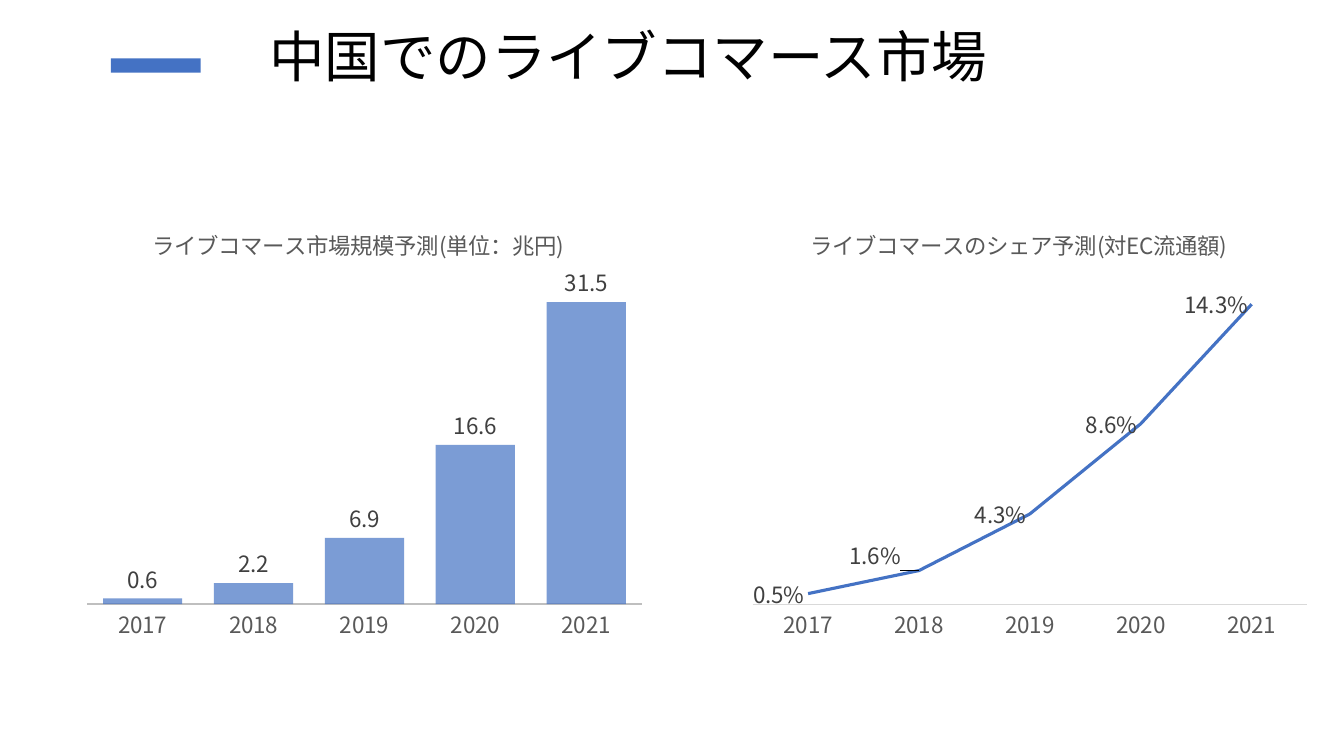
"""Build the slide on the live commerce market in China."""
import pptx
import pptx.chart.data
import pptx.dml.color
import pptx.enum.chart
import pptx.enum.shapes
import pptx.enum.text
import pptx.oxml
import pptx.oxml.ns
import pptx.util

Inches = pptx.util.Inches
Pt = pptx.util.Pt
RGBColor = pptx.dml.color.RGBColor
ChartType = pptx.enum.chart.XL_CHART_TYPE
LabelPosition = pptx.enum.chart.XL_LABEL_POSITION
qn = pptx.oxml.ns.qn

BLUE = RGBColor(0x44, 0x72, 0xC4)
BLACK = RGBColor(0, 0, 0)
TEXT_GREY = RGBColor(0x59, 0x59, 0x59)
LABEL_GREY = RGBColor(0x40, 0x40, 0x40)
BAR_AXIS_GREY = RGBColor(0xBF, 0xBF, 0xBF)
LINE_AXIS_GREY = RGBColor(0xD9, 0xD9, 0xD9)
FONT = "Noto Sans CJK SC"
YEARS = ["2017", "2018", "2019", "2020", "2021"]


def format_font(font, size, color):
    """Set the typeface, size and colour of a font."""
    font.name = FONT
    font.size = Pt(size)
    font.bold = False
    font.color.rgb = color


def use_east_asian_font(element):
    """Use each Latin typeface for East Asian text as well."""
    for latin in list(element.iter(qn("a:latin"))):
        latin.addnext(latin.makeelement(qn("a:ea"), {"typeface": latin.get("typeface")}))


def set_layout(parent, index, settings):
    """Give a chart part a manual layout, inserted at the child index."""
    for layout in parent.findall(qn("c:layout")):
        parent.remove(layout)
    values = "".join(f'<c:{name} val="{value}"/>' for name, value in settings.items())
    parent.insert(index, pptx.oxml.parse_xml(
        f'<c:layout {pptx.oxml.ns.nsdecls("c")}>'
        f"<c:manualLayout>{values}</c:manualLayout></c:layout>"))


def add_heading(slide, left, top, width, height):
    """Place the slide title with the blue bar on its left."""
    title = slide.shapes.title
    title.left, title.top, title.width, title.height = (
        Inches(left + 1.47), Inches(top), Inches(width - 1.47), Inches(height))
    text_frame = title.text_frame
    text_frame.text = "中国でのライブコマース市場"
    text_frame.vertical_anchor = pptx.enum.text.MSO_ANCHOR.MIDDLE
    text_frame.auto_size = pptx.enum.text.MSO_AUTO_SIZE.NONE
    paragraph = text_frame.paragraphs[0]
    paragraph.alignment = pptx.enum.text.PP_ALIGN.LEFT
    paragraph.line_spacing = 0.9
    format_font(paragraph.runs[0].font, 39.6, BLACK)
    use_east_asian_font(title.element)

    bar = slide.shapes.add_shape(
        pptx.enum.shapes.MSO_SHAPE.RECTANGLE,
        Inches(left), Inches(top + 0.18), Inches(0.89), Inches(0.14))
    bar.shadow.inherit = False
    bar.fill.solid()
    bar.fill.fore_color.rgb = BLUE
    bar.line.fill.background()


def add_year_chart(slide, box, chart_type, title, title_left, values, number_format,
                   maximum, label_position, axis_color, axis_width):
    """Add a titled chart of yearly values inside the box."""
    data = pptx.chart.data.CategoryChartData(number_format=number_format)
    data.categories = YEARS
    data.add_series("Series 1", values)
    chart = slide.shapes.add_chart(chart_type, *map(Inches, box), data).chart
    chart.has_legend = False
    format_font(chart.font, 16, TEXT_GREY)

    chart.has_title = True
    text_frame = chart.chart_title.text_frame
    text_frame.text = title
    format_font(text_frame.paragraphs[0].runs[0].font, 16, TEXT_GREY)
    set_layout(chart.element.find(".//" + qn("c:title")), 1,
               {"xMode": "edge", "yMode": "edge", "x": title_left, "y": 0.04})
    set_layout(chart.element.find(".//" + qn("c:plotArea")), 0,
               {"layoutTarget": "inner", "xMode": "edge", "yMode": "edge",
                "x": 0.02, "y": 0.144, "w": 0.96, "h": 0.755})

    value_axis = chart.value_axis
    value_axis.visible = False
    value_axis.has_major_gridlines = False
    value_axis.minimum_scale = 0
    value_axis.maximum_scale = maximum
    category_axis = chart.category_axis
    category_axis.major_tick_mark = pptx.enum.chart.XL_TICK_MARK.NONE
    category_axis.format.line.color.rgb = axis_color
    category_axis.format.line.width = Pt(axis_width)
    format_font(category_axis.tick_labels.font, 16, TEXT_GREY)

    labels = chart.plots[0].series[0].data_labels
    labels.show_value = True
    labels.number_format = number_format
    labels.number_format_is_linked = False
    labels.position = label_position
    format_font(labels.font, 16, LABEL_GREY)
    return chart


def add_market_size(slide, box):
    """Add the column chart of the market size."""
    chart = add_year_chart(
        slide, box, ChartType.COLUMN_CLUSTERED, "ライブコマース市場規模予測(単位：兆円)", 0.126,
        [0.6, 2.2, 6.9, 16.6, 31.5], "0.0", 35, LabelPosition.OUTSIDE_END,
        BAR_AXIS_GREY, 1.25)
    plot = chart.plots[0]
    plot.vary_by_categories = False
    plot.gap_width = 40
    plot.overlap = 25
    series = plot.series[0]
    series.format.fill.solid()
    series.format.fill.fore_color.rgb = BLUE
    fill_color = chart.element.find(f".//{qn('c:ser')}/{qn('c:spPr')}//{qn('a:srgbClr')}")
    fill_color.append(fill_color.makeelement(qn("a:alpha"), {"val": "70000"}))
    use_east_asian_font(chart.element)


def add_market_share(slide, box):
    """Add the line chart of the share of online sales."""
    chart = add_year_chart(
        slide, box, ChartType.LINE, "ライブコマースのシェア予測(対EC流通額)", 0.113,
        [0.005, 0.016, 0.043, 0.086, 0.143], "0.0%", 0.16, LabelPosition.LEFT,
        LINE_AXIS_GREY, 0.75)
    chart.plots[0].vary_by_categories = False
    series = chart.plots[0].series[0]
    series.smooth = False
    series.marker.style = pptx.enum.chart.XL_MARKER_STYLE.NONE
    series.format.line.color.rgb = BLUE
    series.format.line.width = Pt(2.25)
    label = series.points[1].data_label
    label.position = LabelPosition.LEFT
    format_font(label.font, 16, LABEL_GREY)
    set_layout(chart.element.find(".//" + qn("c:dLbl")), 1, {"x": -0.025, "y": -0.035})
    use_east_asian_font(chart.element)


def main():
    """Build and save the presentation."""
    presentation = pptx.Presentation()
    presentation.slide_width = Inches(13.33)
    presentation.slide_height = Inches(7.5)
    slide = presentation.slides.add_slide(presentation.slide_layouts[5])
    add_heading(slide, 1.1, 0.4, 11.31, 0.39)
    add_market_size(slide, (0.75, 2.03, 5.73, 4.41))
    add_market_share(slide, (7.35, 2.03, 5.73, 4.41))
    presentation.save("out.pptx")


if __name__ == "__main__":
    main()
